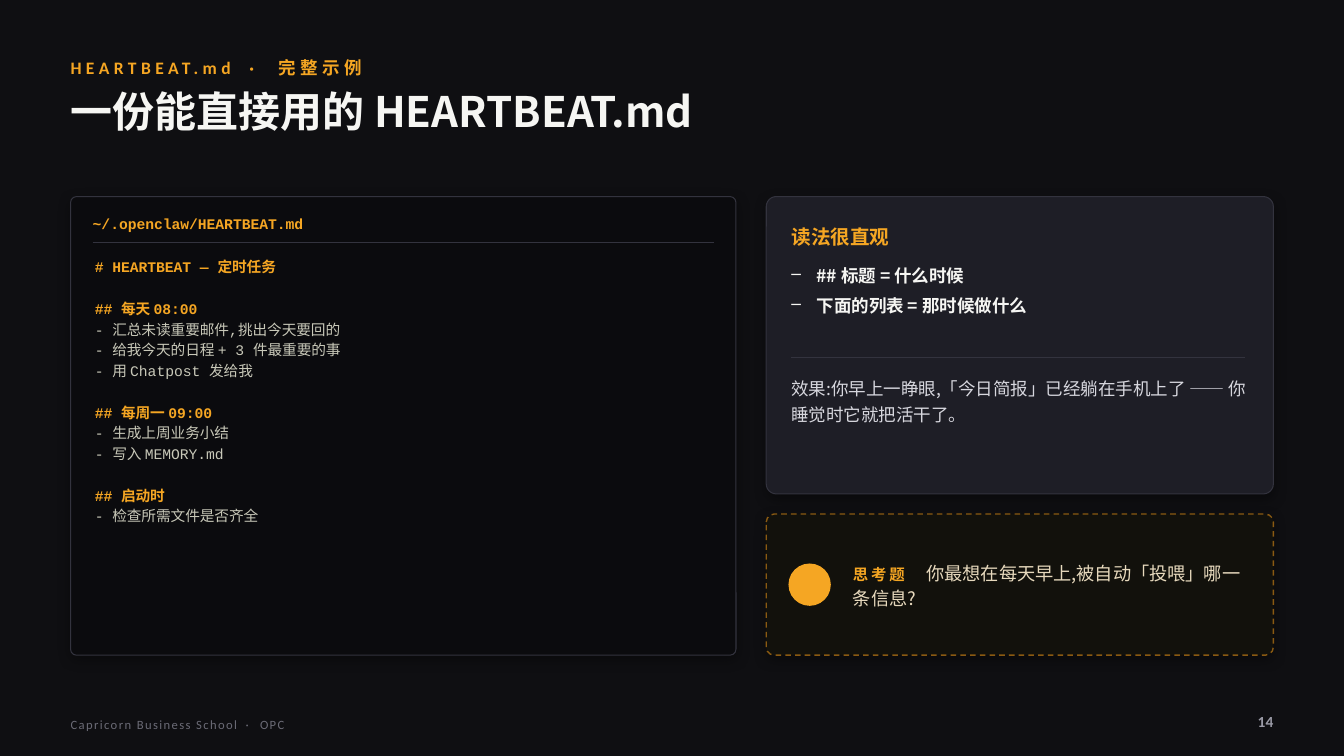
from dataclasses import dataclass

from lxml import etree
from pptx import Presentation
from pptx.dml.color import RGBColor
from pptx.enum.dml import MSO_LINE
from pptx.enum.shapes import MSO_CONNECTOR, MSO_SHAPE
from pptx.enum.text import MSO_ANCHOR, MSO_AUTO_SIZE, PP_ALIGN
from pptx.oxml import parse_xml
from pptx.oxml.ns import nsdecls, qn
from pptx.util import Inches, Pt

TOP, MIDDLE = MSO_ANCHOR.TOP, MSO_ANCHOR.MIDDLE
LEFT, RIGHT = PP_ALIGN.LEFT, PP_ALIGN.RIGHT
ROUNDED, OVAL = MSO_SHAPE.ROUNDED_RECTANGLE, MSO_SHAPE.OVAL
STRAIGHT, DASH = MSO_CONNECTOR.STRAIGHT, MSO_LINE.DASH


@dataclass(frozen=True)
class Theme:
    background: str = "0F0F12"
    accent: str = "F5A623"
    white: str = "F6F6F3"
    border: str = "33333E"
    code_fill: str = "0B0B0E"
    code_text: str = "C8C8B8"
    card_fill: str = "1E1E26"
    card_text: str = "D7D7DE"
    question_fill: str = "12110C"
    question_border: str = "8A5A12"
    question_text: str = "E7D9BD"
    footer: str = "6B6B76"
    page_number: str = "9A9AA6"
    sans: str = "Calibri"
    cjk: str = "Noto Sans CJK SC"
    mono: str = "Courier New"
    title_size: float = 30
    heading_size: float = 14
    question_size: float = 13
    body_size: float = 12.5
    label_size: float = 11
    code_size: float = 10.5
    footer_size: float = 9


THEME = Theme()


def style(face, size, color, bold=False, spacing=0):
    return {"name": face, "size": Pt(size), "bold": bold, "color": color, "spacing": spacing}


def write(shape, paragraphs, anchor=TOP, align=LEFT, **layout):
    """Fill a shape with paragraphs, each a list of (text, style) pairs."""
    frame = shape.text_frame
    frame_format = {"word_wrap": True, "auto_size": MSO_AUTO_SIZE.NONE, "vertical_anchor": anchor,
                    "margin_left": 0, "margin_right": 0, "margin_top": 0, "margin_bottom": 0}
    for name, value in frame_format.items():
        setattr(frame, name, value)
    for index, spans in enumerate(paragraphs):
        para = frame.add_paragraph() if index else frame.paragraphs[0]
        para.alignment = align
        for name, value in layout.items():
            setattr(para, name, value)
        for text, look in spans:
            span = para.add_run()
            span.text = text
            for name in ("name", "size", "bold"):
                setattr(span.font, name, look[name])
            span.font.color.rgb = RGBColor.from_string(look["color"])
            properties = span.font._element
            properties.set("spc", str(round(look["spacing"] * 100)))
            if look["name"] == THEME.cjk:
                etree.SubElement(properties, qn("a:ea")).set("typeface", THEME.cjk)
    return frame.paragraphs


deck = Presentation()
deck.slide_width, deck.slide_height = Inches(13.33), Inches(7.5)
page = deck.slides.add_slide(deck.slide_layouts[5])
page.background.fill.solid()
page.background.fill.fore_color.rgb = RGBColor.from_string(THEME.background)

# Cards and the question marker: kind, box, corner, fill, border, width, dash
panels = [
    (ROUNDED, (0.7, 1.95, 6.6, 4.55), 0.013, THEME.code_fill, THEME.border, 0.75, None),
    (ROUNDED, (7.6, 1.95, 5.03, 2.95), 0.034, THEME.card_fill, THEME.border, 0.75, None),
    (ROUNDED, (7.6, 5.1, 5.03, 1.4), 0.057, THEME.question_fill, THEME.question_border, 1, DASH),
    (OVAL, (7.82, 5.59, 0.42, 0.42), None, THEME.accent, None, 0, None),
]
for kind, box, corner, fill, border, width, dash in panels:
    panel = page.shapes.add_shape(kind, *map(Inches, box))
    panel.shadow.inherit = False
    panel.fill.solid()
    panel.fill.fore_color.rgb = RGBColor.from_string(fill)
    if border is None:
        panel.line.fill.background()
        continue
    panel.adjustments[0] = corner
    panel.line.color.rgb = RGBColor.from_string(border)
    panel.line.width = Pt(width)
    panel.line.dash_style = dash
    panel._element.spPr.find(qn("a:effectLst")).append(parse_xml(
        f'<a:outerShdw {nsdecls("a")} blurRad="{Pt(9)}" dist="{Pt(3)}" dir="5400000" algn="t" '
        'rotWithShape="0"><a:srgbClr val="000000"><a:alpha val="34000"/></a:srgbClr></a:outerShdw>'))

for left, right, height in [(0.92, 7.08, 2.41), (7.85, 12.35, 3.55)]:
    divider = page.shapes.add_connector(STRAIGHT, *map(Inches, (left, height, right, height)))
    divider.line.color.rgb = RGBColor.from_string(THEME.border)
    divider.line.width = Pt(0.75)
    etree.SubElement(divider._element.spPr, qn("a:effectLst"))

title = page.shapes.title
title.left, title.top, title.width, title.height = map(Inches, (0.7, 0.85, 11.93, 0.9))
write(title, [[("一份能直接用的 HEARTBEAT.md", style(THEME.cjk, THEME.title_size, THEME.white, True))]],
      line_spacing=1.0)

kicker = style(THEME.sans, THEME.body_size, THEME.accent, True, 3.2)
code_heading = style(THEME.mono, THEME.code_size, THEME.accent, True)
code_line = style(THEME.mono, THEME.code_size, THEME.code_text)
card_heading = style(THEME.cjk, THEME.heading_size, THEME.accent, True)
bullet = style(THEME.cjk, THEME.body_size, THEME.white, True)
effect = style(THEME.cjk, THEME.body_size, THEME.card_text)
question_label = style(THEME.sans, THEME.label_size, THEME.accent, True, 2)
question = style(THEME.cjk, THEME.question_size, THEME.question_text)
footer = style(THEME.sans, THEME.footer_size, THEME.footer, spacing=1)
page_number = style(THEME.sans, THEME.label_size, THEME.page_number, True)

code = [
    "# HEARTBEAT — 定时任务",
    "## 每天 08:00",
    "- 汇总未读重要邮件,挑出今天要回的",
    "- 给我今天的日程 + 3 件最重要的事",
    "- 用 Chatpost 发给我",
    "## 每周一 09:00",
    "- 生成上周业务小结",
    "- 写入 MEMORY.md",
    "## 启动时",
    "- 检查所需文件是否齐全",
]
code_paragraphs = [[(line, code_heading if line.startswith("#") else code_line)] for line in code]

# Text boxes: box, paragraphs, paragraph and frame format
texts = {
    "kicker": ((0.7, 0.52, 11.93, 0.3),
               [[("HEARTBEAT.md", kicker), (" · ", {**kicker, "spacing": 7.2}), ("完整示例", kicker)]],
               {"anchor": MIDDLE}),
    "file": ((0.92, 2.07, 6.16, 0.3), [[("~/.openclaw/HEARTBEAT.md", code_heading)]],
             {"anchor": MIDDLE}),
    "code": ((0.94, 2.53, 6.14, 3.85), code_paragraphs, {"line_spacing": 1.18}),
    "heading": ((7.85, 2.15, 4.6, 0.4), [[("读法很直观", card_heading)]], {"anchor": MIDDLE}),
    "bullets": ((7.85, 2.6, 4.6, 0.9),
                [[("## 标题 = 什么时候", bullet)], [("下面的列表 = 那时候做什么", bullet)]],
                {"line_spacing": 1.12, "space_after": Pt(5)}),
    "effect": ((7.85, 3.7, 4.6, 1.1),
               [[("效果:你早上一睁眼,「今日简报」已经躺在手机上了 —— 你睡觉时它就把活干了。", effect)]],
               {"line_spacing": 1.25}),
    "question": ((8.46, 5.1, 3.93, 1.4),
                 [[("思考题\t", question_label),
                   ("你最想在每天早上,被自动「投喂」哪一条信息?", question)]],
                 {"anchor": MIDDLE, "line_spacing": 1.12}),
    "footer": ((0.7, 7.04, 7, 0.3),
               [[("Capricorn Business School", footer), (" · ", {**footer, "spacing": 3}),
                 ("OPC", footer)]],
               {"anchor": MIDDLE}),
    "number": ((11.83, 7, 0.8, 0.32), [[("14", page_number)]], {"anchor": MIDDLE, "align": RIGHT}),
}
written = {}
for name, (box, paragraphs, layout) in texts.items():
    written[name] = write(page.shapes.add_textbox(*map(Inches, box)), paragraphs, **layout)

for line, para in zip(code, written["code"]):
    if line.startswith("##"):
        para.space_before = Pt(14.8)

for para in written["bullets"]:
    properties = para._p.get_or_add_pPr()
    properties.set("marL", str(Inches(0.25)))
    properties.set("indent", str(-Inches(0.25)))
    etree.SubElement(properties, qn("a:buChar")).set("char", "–")

tab_stops = etree.SubElement(written["question"][0]._p.get_or_add_pPr(), qn("a:tabLst"))
etree.SubElement(tab_stops, qn("a:tab"), pos=str(Inches(0.73)), algn="l")

deck.save("out.pptx")
